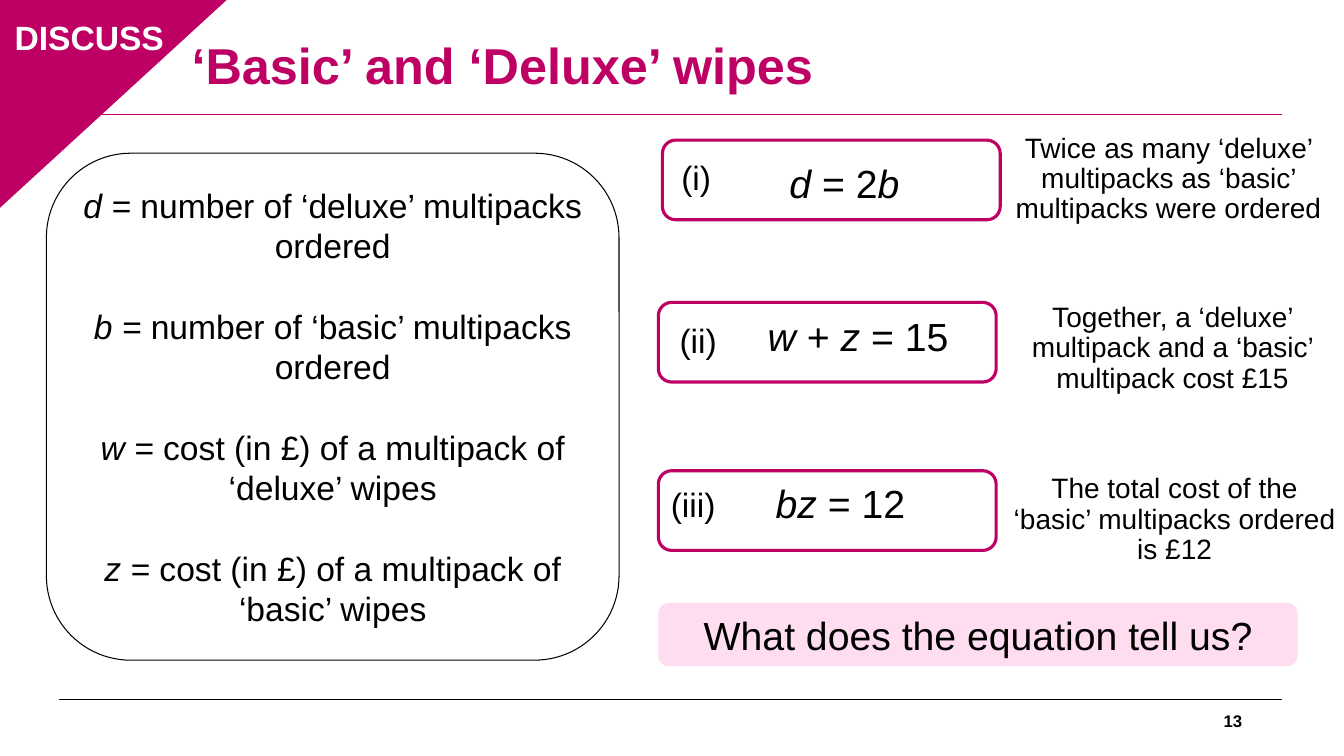
from lxml import etree
from pptx import Presentation
from pptx.dml.color import RGBColor
from pptx.enum.shapes import MSO_CONNECTOR, MSO_SHAPE
from pptx.enum.text import MSO_ANCHOR, MSO_AUTO_SIZE, PP_ALIGN
from pptx.oxml.ns import qn
from pptx.util import Pt

PX = 9144  # 100 px to the inch
FONT = "Arial"
PINK = RGBColor(0xBE, 0x00, 0x64)
PALE = RGBColor(0xFF, 0xDD, 0xF1)
BLACK = RGBColor(0, 0, 0)
WHITE = RGBColor(0xFF, 0xFF, 0xFF)
ROUND = MSO_SHAPE.ROUNDED_RECTANGLE
CORNER = MSO_SHAPE.ISOSCELES_TRIANGLE
STRAIGHT = MSO_CONNECTOR.STRAIGHT
LEFT, MID, RIGHT = PP_ALIGN.LEFT, PP_ALIGN.CENTER, PP_ALIGN.RIGHT
TOP, CENTRE = MSO_ANCHOR.TOP, MSO_ANCHOR.MIDDLE
FIXED = MSO_AUTO_SIZE.NONE

TERMS = [
    ("d = ", "number of ‘deluxe’ multipacks ordered"),
    ("b = ", "number of ‘basic’ multipacks ordered"),
    ("w = ", "cost (in £) of a multipack of ‘deluxe’ wipes"),
    ("z = ", "cost (in £) of a multipack of ‘basic’ wipes"),
]
# Each row: frame, label, label place, equation parts, its place, meaning, its place
ROWS = [
    ((657, 139), "(i)", (583, 148), ("d", " = 2", "b"), (730, 157, 215),
     "Twice as many ‘deluxe’ multipacks as ‘basic’ multipacks were ordered", (988, 128)),
    ((653, 300), "(ii)", (585, 309), ("w", " + ", "z ", "= 15"), (735, 309, 232),
     "Together, a ‘deluxe’ multipack and a ‘basic’ multipack cost £15", (992, 296)),
    ((653, 467), "(iii)", (580, 472), ("bz ", "= 12"), (726, 474, 215),
     "The total cost of the ‘basic’ multipacks ordered is £12", (994, 466)),
]


def scale(*sizes):
    return [size * PX for size in sizes]


def write(shape, paras, size, color=BLACK, bold=False, align=MID,
          anchor=TOP, lead=None, after=0):
    """Fill a shape; the parts of a paragraph alternate italic and upright."""
    frame = shape.text_frame
    frame.word_wrap = True
    frame.auto_size = FIXED
    frame.vertical_anchor = anchor
    for i, parts in enumerate(paras):
        para = frame.add_paragraph() if i else frame.paragraphs[0]
        para.alignment = align
        para.line_spacing = lead
        para.space_after = Pt(after if i < len(paras) - 1 or i == 0 else 0)
        for j, part in enumerate(parts):
            run = para.add_run()
            run.text = part
            font = run.font
            font.name, font.size, font.bold = FONT, Pt(size), bold
            font.italic = len(parts) > 1 and j % 2 == 0
            font.color.rgb = color


def add_text(slide, box, parts, size, **style):
    shape = slide.shapes.add_textbox(*scale(*box))
    write(shape, [parts], size, **style)


def add_panel(slide, box, fill=None, line=None, width=0.75, kind=ROUND):
    shape = slide.shapes.add_shape(kind, *scale(*box))
    shape.shadow.inherit = False
    if fill is None:
        shape.fill.background()
    else:
        shape.fill.solid()
        shape.fill.fore_color.rgb = fill
    if line is None:
        shape.line.fill.background()
    else:
        shape.line.color.rgb = line
        shape.line.width = Pt(width)
    return shape


def add_rule(slide, y, color):
    rule = slide.shapes.add_connector(STRAIGHT, *scale(59, y, 1272, y))
    rule.line.color.rgb = color
    rule.line.width = Pt(0.75)
    etree.SubElement(rule.element.spPr, qn("a:effectLst"))


def add_title(slide, text):
    title = slide.shapes.title
    title.left, title.top, title.width, title.height = scale(180, 12, 869, 111)
    write(title, [[text]], 36, PINK, True, LEFT, CENTRE, 0.9)


def add_row(slide, frame, label, spot, parts, place, meaning, corner):
    add_text(slide, (*spot, 215, 54), [label], 24, lead=Pt(31), after=6)
    add_panel(slide, (*frame, 335, 79), line=PINK, width=2.25)
    add_text(slide, (*place, 54), parts, 28, lead=Pt(31), after=6)
    add_text(slide, (*corner, 342, 102), [meaning], 20, lead=0.9, after=6)


def add_flag(slide, text):
    flag = add_panel(slide, (-3, -2, 229, 210), PINK, PINK, 1, CORNER)
    flag.adjustments[0] = 0
    flag.element.spPr.xfrm.set("flipV", "1")
    add_text(slide, (-9, 12, 195, 50), [text], 24, color=WHITE, bold=True)


def main():
    deck = Presentation()
    deck.slide_width, deck.slide_height = scale(1333, 750)
    slide = deck.slides.add_slide(deck.slide_layouts[5])

    # Rules, title and page number
    add_rule(slide, 694, BLACK)
    add_rule(slide, 114, PINK)
    add_title(slide, "‘Basic’ and ‘Deluxe’ wipes")
    add_text(slide, (942, 695, 300, 40), ["13"], 12, bold=True,
             align=RIGHT, anchor=CENTRE)

    # Meaning of each letter
    terms = add_panel(slide, (46, 152, 568, 503), line=BLACK)
    write(terms, TERMS, 24, anchor=CENTRE, lead=Pt(28.8), after=28.8)

    # Equations with their meanings
    for row in ROWS:
        add_row(slide, *row)

    # Corner flag and question
    add_flag(slide, "DISCUSS")
    ask = add_panel(slide, (653, 598, 634, 63), fill=PALE)
    write(ask, [["What does the equation tell us?"]], 28, anchor=CENTRE)

    deck.save("out.pptx")


if __name__ == "__main__":
    main()
